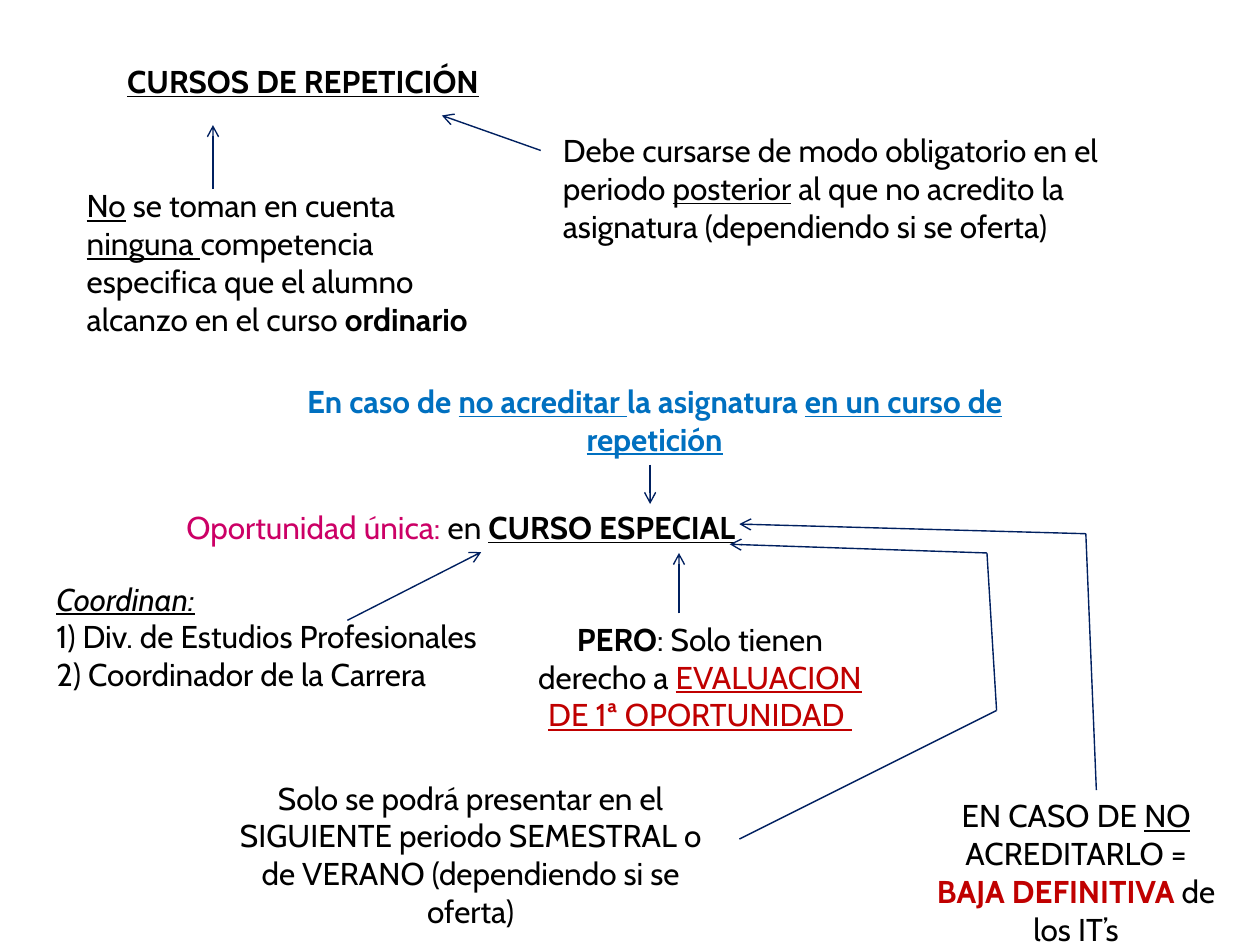
from pptx import Presentation
from pptx import util as u
from pptx.dml import color
from pptx.enum import shapes, text
from pptx.oxml import ns
from lxml import etree

BLACK, NAVY, BLUE, PINK, RED = "000000", "002060", "0070C0", "CC0066", "C00000"
LEFT, CENTER = text.PP_ALIGN.LEFT, text.PP_ALIGN.CENTER


def rgb(value):
    return color.RGBColor.from_string(value)


class Sketch:
    """Holds the text and line style together with the current slide."""

    font, size = "Cabin", 18
    line_color, line_width = NAVY, 0.79

    def __init__(self, slide):
        self.slide = slide

    def fill_text(self, box, paragraphs, align=LEFT, wrap=True):
        """Each span is (text, marks, color); marks is any of b, i and u."""
        frame = box.text_frame
        frame.word_wrap = wrap
        frame.auto_size = text.MSO_AUTO_SIZE.SHAPE_TO_FIT_TEXT
        frame.vertical_anchor = text.MSO_ANCHOR.TOP
        for index, spans in enumerate(paragraphs):
            para = frame.add_paragraph() if index else frame.paragraphs[0]
            para.alignment = align
            para.line_spacing = 1.0
            para.space_before = para.space_after = u.Pt(0)
            for words, marks, tint in spans:
                span = para.add_run()
                span.text = words
                font = span.font
                font.name, font.size = self.font, u.Pt(self.size)
                font.bold, font.italic = "b" in marks, "i" in marks
                font.underline = "u" in marks
                font.color.rgb = rgb(tint)

    def title(self, left, top, width, height, *spans):
        box = self.slide.shapes.title
        box.left, box.top = u.Pt(left), u.Pt(top)
        box.width, box.height = u.Pt(width), u.Pt(height)
        self.fill_text(box, [spans])

    def note(self, left, top, width, height, *paragraphs, **style):
        box = self.slide.shapes.add_textbox(
            u.Pt(left), u.Pt(top), u.Pt(width), u.Pt(height))
        self.fill_text(box, paragraphs, **style)

    def arrow(self, *points):
        """Joins the points with straight lines; the last one gets the head."""
        for start, end in zip(points, points[1:]):
            line = self.slide.shapes.add_connector(
                shapes.MSO_CONNECTOR.STRAIGHT, *map(u.Pt, start + end))
            line.line.color.rgb = rgb(self.line_color)
            line.line.width = u.Pt(self.line_width)
            properties = line._element.spPr
            if end == points[-1]:
                outline = properties.find(ns.qn("a:ln"))
                etree.SubElement(outline, ns.qn("a:tailEnd"), type="arrow")
            etree.SubElement(properties, ns.qn("a:effectLst"))


def main():
    deck = Presentation()
    deck.slide_width, deck.slide_height = u.Pt(720), u.Pt(540)
    page = Sketch(deck.slides.add_slide(deck.slide_layouts[5]))

    # Repeat courses and their two conditions
    page.title(65.5, 31.7, 229.7, 29, ("CURSOS DE REPETICIÓN", "bu", BLACK))
    page.note(314.6, 71.3, 340, 72.7, [
        ("Debe cursarse de modo obligatorio en el periodo ", "", BLACK),
        ("posterior", "u", BLACK),
        (" al que no acredito la asignatura (dependiendo si se oferta)",
         "", BLACK)])
    page.note(42.5, 103, 232.5, 116.6, [
        ("No", "u", BLACK),
        (" se toman en cuenta ", "", BLACK),
        ("ninguna ", "u", BLACK),
        ("competencia especifica que el alumno alcanzo en el curso ",
         "", BLACK),
        ("ordinario", "b", BLACK)])
    page.arrow((309, 86), (252.5, 66))
    page.arrow((121.7, 108), (121.7, 71.5))

    # Failing a repeat course leads to the special course
    page.note(161.3, 214.6, 425.5, 51, [
        ("En caso de ", "b", BLUE),
        ("no acreditar ", "bu", BLUE),
        ("la asignatura ", "b", BLUE),
        ("en un curso de repetición", "bu", BLUE)], align=CENTER)
    page.note(99.4, 286.6, 351.4, 29, [
        ("Oportunidad única: ", "", PINK),
        ("en ", "", BLACK),
        ("CURSO ESPECIAL", "bu", BLACK)])
    page.arrow((371.5, 265.5), (371.5, 288))

    # Who coordinates it
    page.note(25.2, 327.6, 269.3, 72.7,
              [("Coordinan:", "iu", BLACK)],
              [("1) Div. de Estudios Profesionales", "", BLACK)],
              [("2) Coordinador de la Carrera", "", BLACK)], wrap=False)
    page.arrow((198.5, 354.5), (275, 315.5))

    # Restrictions
    page.note(292.3, 350.6, 215.3, 72.7, [
        ("PERO", "b", BLACK),
        (": Solo tienen derecho a ", "", BLACK),
        ("EVALUACION DE 1ª OPORTUNIDAD ", "u", RED)], align=CENTER)
    page.arrow((388, 350.5), (388, 316))

    page.note(121.7, 441.4, 294.5, 72.7, [
        ("Solo se podrá presentar en el SIGUIENTE periodo SEMESTRAL o "
         "de VERANO (dependiendo si se oferta)", "", BLACK)], align=CENTER)
    page.arrow((422.5, 479.5), (569.5, 406), (564, 316), (417, 311))

    # Failing the special course
    page.note(524.2, 451.4, 181.4, 72.7, [
        ("EN CASO DE ", "", BLACK),
        ("NO ", "u", BLACK),
        ("ACREDITARLO = ", "", BLACK),
        ("BAJA DEFINITIVA", "b", RED),
        (" de los IT’s", "", BLACK)], align=CENTER)
    page.arrow((626.5, 451.5), (620.5, 305), (422.5, 299.5))

    deck.save("out.pptx")


if __name__ == "__main__":
    main()
